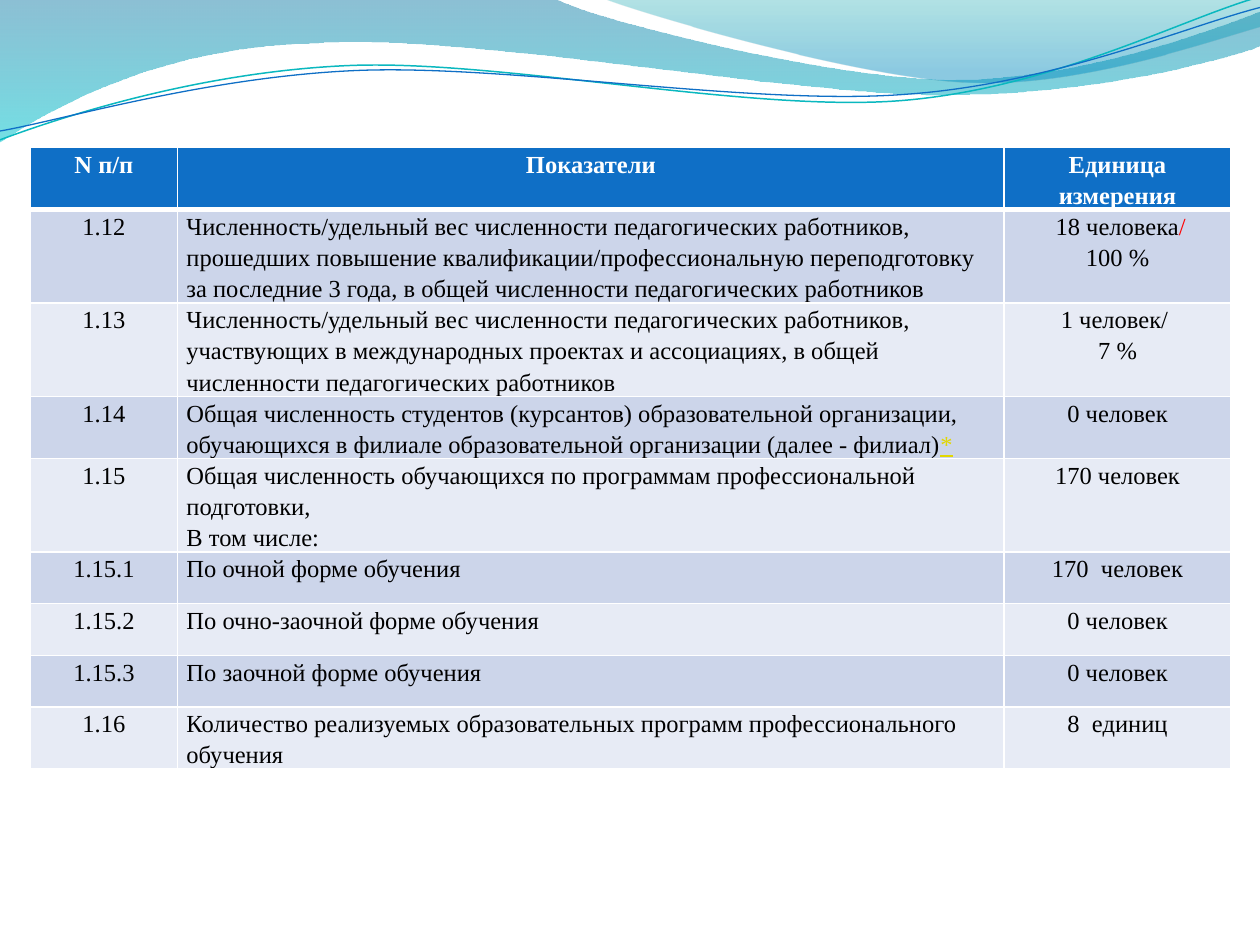
from math import cos, radians, sin

from lxml import etree
from pptx import Presentation
from pptx.dml.color import RGBColor
from pptx.enum.text import PP_ALIGN as Align
from pptx.oxml import parse_xml
from pptx.oxml.ns import nsdecls, qn
from pptx.util import Inches, Pt


def color(hex_value):
    return RGBColor.from_string(hex_value)


def write(paragraph, text, ink="000000", bold=False, underline=False, align=Align.LEFT):
    paragraph.alignment = align
    paragraph.line_spacing = 1.15
    run = paragraph.add_run()
    run.text = text
    run.font.name = "Times New Roman"
    run.font.size = Pt(14)
    run.font.bold = bold
    run.font.underline = underline
    run.font.color.rgb = color(ink)


prs = Presentation()
prs.slide_width, prs.slide_height = Inches(10), Inches(7.5)
slide = prs.slides.add_slide(prs.slide_layouts[6])

# Waves: pairs are straight steps, sixes are Bezier curves (inches).
# Gradient stops are (position, colour, opacity in percent).
TILT = -2.7
waves = [
    {"path": [(0, 0), (4.4, -0.01), (4.76, 0.17, 6.64, 0.63, 7.58, 0.63),
              (8.53, 0.63, 9.58, 0.26, 10, 0.09), (10.01, 0.36),
              (9.83, 0.44, 8.7, 0.76, 7.46, 0.75), (6.22, 0.75, 3.82, 0.28, 2.57, 0.34),
              (1.29, 0.36, 0.46, 0.83, -0.01, 1.13), (0, 0)],
     "stops": [(0, "0074A1", 45), (1, "00C6CF", 55)]},
    {"path": [(4.79, -0.01), (5.09, 0.11, 6.82, 0.62, 7.69, 0.65),
              (8.56, 0.69, 9.61, 0.32, 10, 0.21), (10, 0), (4.79, -0.01)],
     "stops": [(0, "00A1A9", 30), (0.8, "008BBF", 45)]},
    {"path": [(0, 1.11), (0.48, 0.93, 1.58, 0.57, 2.77, 0.52),
              (3.95, 0.47, 5.93, 0.89, 7.13, 0.8), (8.33, 0.71, 9.38, 0.15, 9.98, -0.02)],
     "line": ("0AB8BF", 0.85), "center": (4.99, 0.58)},
    {"path": [(0, 1.04), (0.47, 0.96, 1.64, 0.61, 2.83, 0.56),
              (4.03, 0.51, 5.97, 0.84, 7.17, 0.75), (8.36, 0.67, 9.41, 0.21, 10, 0.06)],
     "line": ("0F6FC6", 0.75), "center": (5, 0.59)},
]
for wave in waves:
    points = [step[i:i + 2] for step in wave["path"] for i in range(0, len(step), 2)]
    if "center" in wave:
        # The path is laid level, then the shape is tilted back
        cx, cy = wave["center"]
        turn_cos, turn_sin = cos(radians(-TILT)), sin(radians(-TILT))
        points = [(cx + (x - cx) * turn_cos - (y - cy) * turn_sin,
                   cy + (x - cx) * turn_sin + (y - cy) * turn_cos) for x, y in points]
    points = [(Inches(x), Inches(y)) for x, y in points]
    outline = slide.shapes.build_freeform(*points[0])
    outline.add_line_segments(points[1:], close="stops" in wave)
    ribbon = outline.convert_to_shape()
    ribbon.shadow.inherit = False

    # Join each three steps of a curve into one Bezier segment
    segments = iter(list(ribbon._element.iter(qn("a:lnTo"))))
    for step in wave["path"][1:]:
        segment = next(segments)
        if len(step) == 6:
            curve = etree.Element(qn("a:cubicBezTo"))
            segment.addprevious(curve)
            for piece in (segment, next(segments), next(segments)):
                curve.append(piece[0])
                piece.getparent().remove(piece)

    if "stops" in wave:
        ribbon.line.fill.background()
        ribbon.fill.gradient()
        ribbon.fill.gradient_angle = 270
        for stop, (position, tint, _) in zip(ribbon.fill.gradient_stops, wave["stops"]):
            stop.position = position
            stop.color.rgb = color(tint)
        tints = ribbon._element.spPr.iter(qn("a:srgbClr"))
        for tint, (_, _, opacity) in zip(tints, wave["stops"]):
            etree.SubElement(tint, qn("a:alpha"), val=str(opacity * 1000))
    else:
        ribbon.rotation = TILT
        ribbon.fill.background()
        ribbon.line.color.rgb = color(wave["line"][0])
        ribbon.line.width = Pt(wave["line"][1])

# Indicators: number, lines of the description, lines of the value.
# A line is text, or text plus a closing mark with its own format.
footnote = ("*", {"ink": "E2D700", "underline": True})
red_slash = ("/", {"ink": "FF0000"})
indicators = [
    ("N п/п", ["Показатели"], ["Единица измерения"]),
    ("1.12", ["Численность/удельный вес численности педагогических работников, прошедших "
              "повышение квалификации/профессиональную переподготовку за последние 3 года, "
              "в общей численности педагогических работников"],
     [(" 18 человека", red_slash), "100 %"]),
    ("1.13", ["Численность/удельный вес численности педагогических работников, участвующих "
              "в международных проектах и ассоциациях, в общей численности педагогических "
              "работников"], ["1 человек/ ", "7 %"]),
    ("1.14", [("Общая численность студентов (курсантов) образовательной организации, "
               "обучающихся в филиале образовательной организации (далее - филиал)",
               footnote)], ["0 человек"]),
    ("1.15", ["Общая численность обучающихся по программам профессиональной подготовки,",
              "В том числе:"], ["170 человек"]),
    ("1.15.1", ["По очной форме обучения"], ["170  человек"]),
    ("1.15.2", ["По очно-заочной форме обучения"], ["0 человек"]),
    ("1.15.3", ["По заочной форме обучения"], ["0 человек"]),
    ("1.16", ["Количество реализуемых образовательных программ профессионального обучения"],
     ["8  единиц"]),
]
ROW_HEIGHT = 0.41
table = slide.shapes.add_table(
    len(indicators), 3, Inches(0.24), Inches(1.17),
    Inches(9.53), Inches(ROW_HEIGHT * len(indicators))).table
for column, width in zip(table.columns, (1.17, 6.56, 1.8)):
    column.width = Inches(width)

for r, (number, description, value) in enumerate(indicators):
    table.rows[r].height = Inches(ROW_HEIGHT)
    header = r == 0
    for c, lines in enumerate(([number], description, value)):
        cell = table.cell(r, c)
        cell.margin_left = cell.margin_right = Inches(0.07)
        cell.margin_top = cell.margin_bottom = 0

        # White borders, thicker under the header
        borders = {"L": 1, "R": 1, "T": 1, "B": 3 if header else 1}
        if r == 1:
            del borders["T"]
        for side, points in borders.items():
            cell._tc.get_or_add_tcPr().append(parse_xml(
                f'<a:ln{side} {nsdecls("a")} w="{Pt(points)}"><a:solidFill>'
                f'<a:srgbClr val="FFFFFF"/></a:solidFill></a:ln{side}>'))
        cell.fill.solid()
        cell.fill.fore_color.rgb = color(
            "0F6FC6" if header else "CCD5EA" if r % 2 else "E7EBF5")

        # Text
        align = Align.LEFT if c == 1 and not header else Align.CENTER
        ink = "FFFFFF" if header else "000000"
        frame = cell.text_frame
        for i, line in enumerate(lines):
            paragraph = frame.add_paragraph() if i else frame.paragraphs[0]
            text, mark = (line, None) if isinstance(line, str) else line
            write(paragraph, text, ink=ink, bold=header, align=align)
            if mark:
                write(paragraph, mark[0], align=align, **mark[1])

prs.save("out.pptx")
